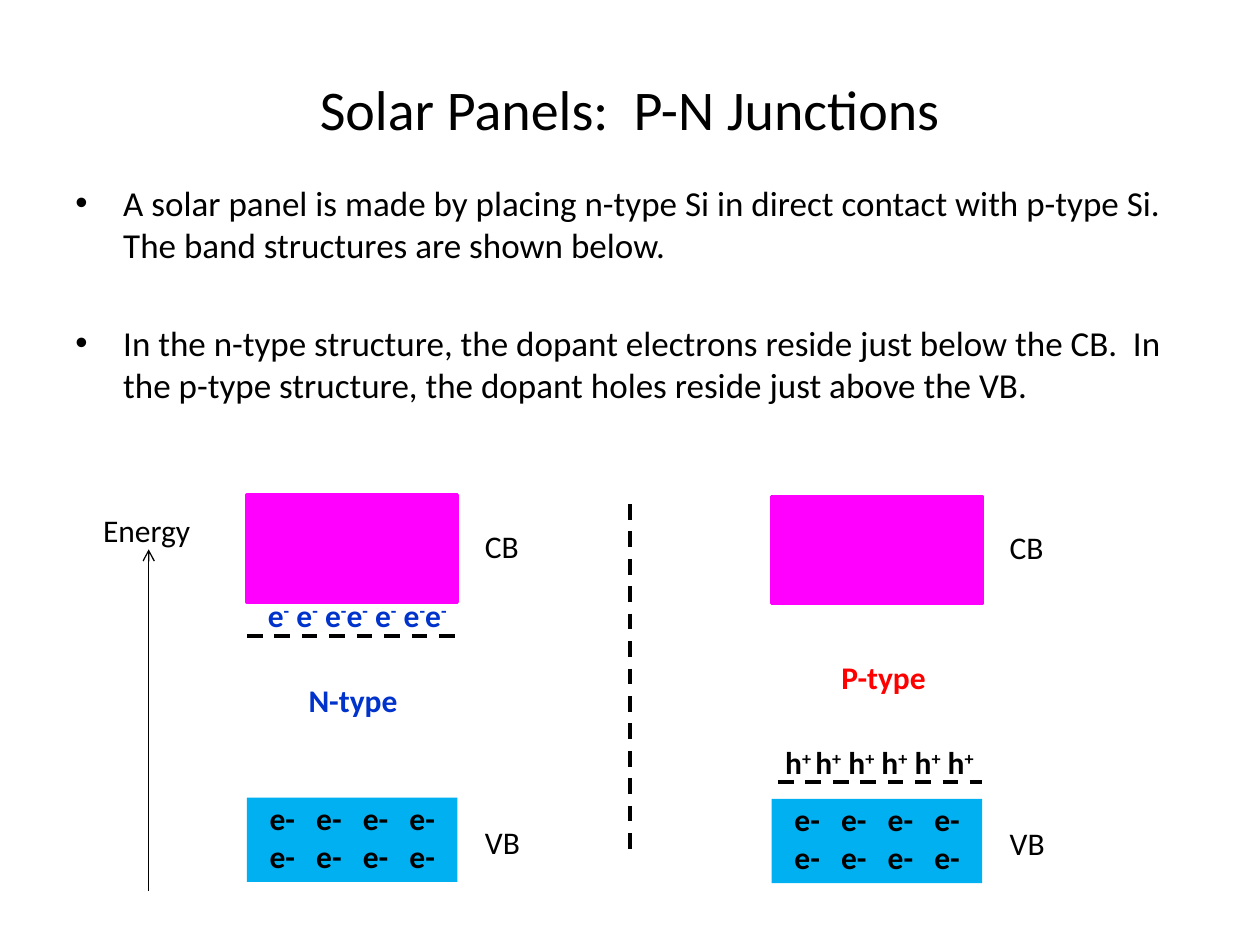
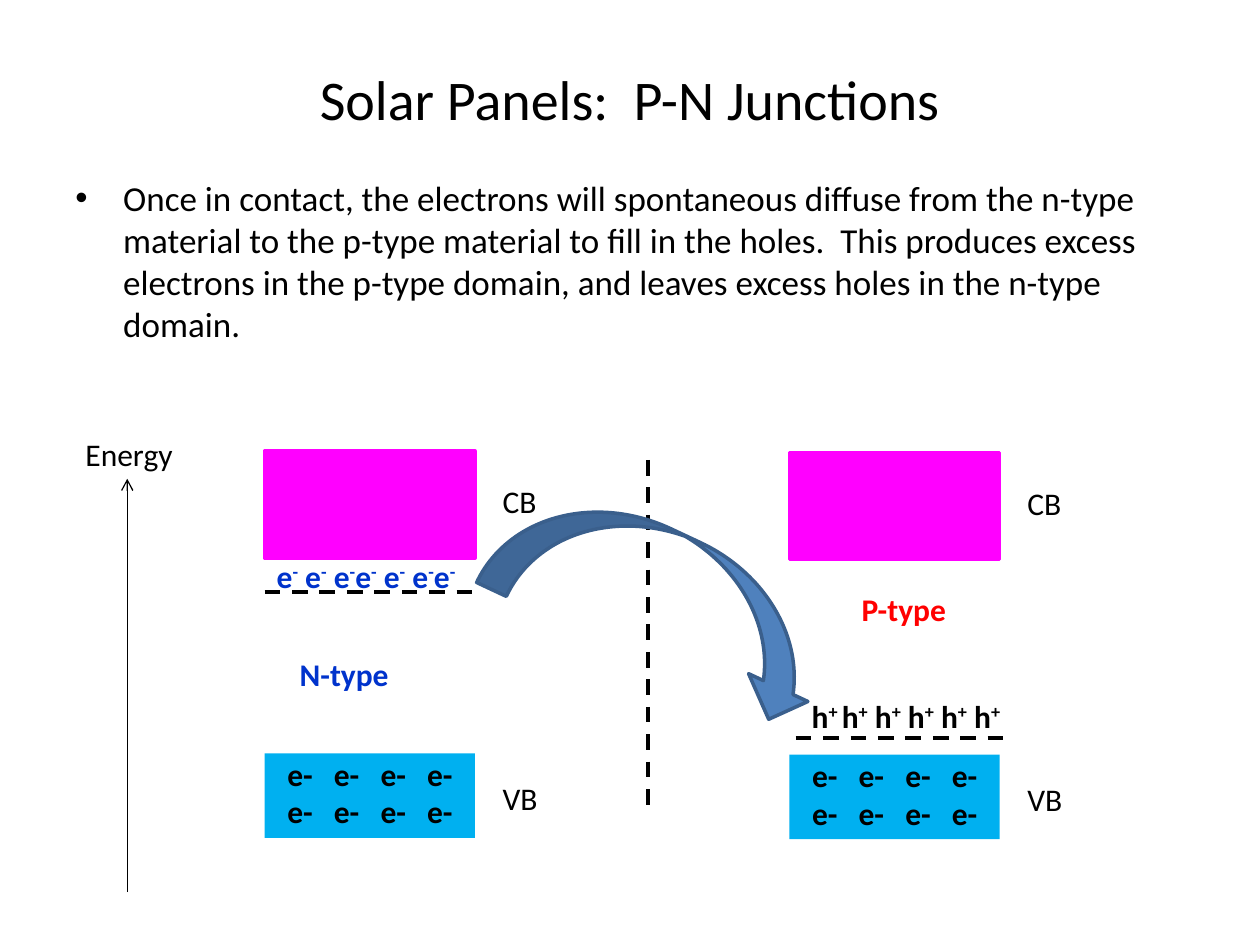
from lxml import etree
from pptx import Presentation
from pptx import util as u
from pptx.dml.color import RGBColor
from pptx.enum import dml, shapes, text
from pptx.oxml import ns

COLORS = {
    "ink": "000000",
    "conduction": "FF00FF",
    "valence": "00B0F0",
    "n_type": "0033CC",
    "p_type": "FF0000",
    "arrow": "4F81BD",
    "arrow_edge": "3A5F8C",
}
FONT = "Calibri"
TITLE = "Solar Panels:  P-N Junctions"
BAND_WIDTH = 1.67
P_OFFSET = 4.165
ELECTRON_PITCH = 0.37
ELECTRONS = "e|-| e|-| e|-|e|-| e|-| e|-|e|-"
HOLES = "h|+ |h|+| h|+| h|+| h|+| h|+"


def rgb(name):
    return RGBColor.from_string(COLORS[name])


def inches(*lengths):
    return [u.Inches(length) for length in lengths]


def format_span(span, size, color, bold=False):
    span.font.name = FONT
    span.font.size = u.Pt(size)
    span.font.bold = bold
    span.font.color.rgb = rgb(color)


def add_text(page, at, wording, size=18, color="ink", bold=False):
    box = page.shapes.add_textbox(*inches(*at))
    box.text_frame.word_wrap = True
    box.text_frame.text = wording
    for para in box.text_frame.paragraphs:
        for span in para.runs:
            format_span(span, size, color, bold)
    return box


def add_title(page, top):
    title = page.shapes.title
    title.left, title.top, title.width, title.height = inches(0.5, top, 9, 0.95)
    title.text_frame.text = TITLE
    title.text_frame.vertical_anchor = text.MSO_ANCHOR.MIDDLE
    para = title.text_frame.paragraphs[0]
    para.alignment = text.PP_ALIGN.CENTER
    format_span(para.runs[0], 32, "ink")


def add_bullets(page, top, height, points):
    box = add_text(page, (0.5, top, 9, height), "\n".join(points), size=20)
    for index, para in enumerate(box.text_frame.paragraphs):
        para.space_before = u.Pt(32 if index else 4)
        props = para._p.get_or_add_pPr()
        props.set("marL", str(u.Inches(0.38)))
        props.set("indent", str(-u.Inches(0.38)))
        etree.SubElement(props, ns.qn("a:buFont"), typeface="Arial")
        etree.SubElement(props, ns.qn("a:buChar"), char="•")


def add_preset(page, kind, at, fill, edge=None):
    shape = page.shapes.add_shape(kind, *inches(*at))
    shape.shadow.inherit = False
    shape.fill.solid()
    shape.fill.fore_color.rgb = rgb(fill)
    if edge:
        shape.line.color.rgb = rgb(edge)
        shape.line.width = u.Pt(2)
    else:
        shape.line.fill.background()
    return shape


def add_line(page, start, end, width=2.25, dashed=True):
    line = page.shapes.add_connector(
        shapes.MSO_CONNECTOR.STRAIGHT, *inches(*start, *end))
    line.line.color.rgb = rgb("ink")
    line.line.width = u.Pt(width)
    if dashed:
        line.line.dash_style = dml.MSO_LINE.DASH
    etree.SubElement(line._element.spPr, ns.qn("a:effectLst"))
    return line


def add_valence_electrons(page, left, top):
    row = "\t".join(["e-"] * 4)
    box = add_text(page, (left, top, 1.58, 0.71), f"{row}\n{row}", bold=True)
    box.text_frame.margin_left = u.Inches(0.13)
    box.text_frame.margin_right = 0
    for para in box.text_frame.paragraphs:
        stops = etree.SubElement(para._p.get_or_add_pPr(), ns.qn("a:tabLst"))
        for column in range(1, 4):
            position = str(u.Inches(column * ELECTRON_PITCH))
            etree.SubElement(stops, ns.qn("a:tab"), pos=position, algn="l")


def add_bands(page, left, top):
    rectangle = shapes.MSO_SHAPE.RECTANGLE
    add_preset(page, rectangle, (left, top + 2.4, BAND_WIDTH, 0.67), "valence")
    add_valence_electrons(page, left + 0.05, top + 2.36)
    add_preset(page, rectangle, (left, top, BAND_WIDTH, 0.85),
               "conduction", "conduction")
    for label, drop in (("VB", 2.55), ("CB", 0.2)):
        add_text(page, (left + 1.79, top + drop, 0.58, 0.4), label)


def add_level(page, left, top, length=BAND_WIDTH):
    add_line(page, (left, top), (left + length, top))


def add_carriers(page, left, top, width, pattern, color):
    box = add_text(page, (left, top, width, 0.4), "")
    para = box.text_frame.paragraphs[0]
    para.alignment = text.PP_ALIGN.CENTER
    for index, part in enumerate(pattern.split("|")):
        span = para.add_run()
        span.text = part
        format_span(span, 18, color, bold=True)
        if index % 2:
            span._r.get_or_add_rPr().set("baseline", "30000")


def add_energy_axis(page, x, bottom, top, label_at):
    axis = add_line(page, (x, bottom), (x, top), width=0.75, dashed=False)
    etree.SubElement(axis.line._get_or_add_ln(), ns.qn("a:tailEnd"), type="arrow")
    add_text(page, (*label_at, 0.96, 0.4), "Energy")


def add_junction(page, left, top, electrons_at, holes_at, n_at, p_at, p_level):
    add_bands(page, left, top)
    add_level(page, left, top + 1.12)
    add_line(page, (left + 3.04, top + 0.07), (left + 3.04, top + 2.82))
    add_bands(page, left + P_OFFSET, top + 0.01)
    add_level(page, left + P_OFFSET + 0.05, top + 2.28, p_level)
    add_text(page, (*n_at, 0.92, 0.4), "N-type", color="n_type", bold=True)
    add_text(page, (*p_at, 0.92, 0.4), "P-type", color="p_type", bold=True)
    add_carriers(page, *electrons_at, 2.19, ELECTRONS, "n_type")
    add_carriers(page, *holes_at, 2.54, HOLES, "ink")


def add_diffusion_arrow(page):
    arrow = add_preset(page, shapes.MSO_SHAPE.CURVED_DOWN_ARROW,
                       (3.87, 4.23, 2.82, 1.04), "arrow", "arrow_edge")
    arrow.rotation = 25.1


def add_page(deck, title_top):
    page = deck.slides.add_slide(deck.slide_layouts.get_by_name("Title Only"))
    add_title(page, title_top)
    return page


def build_structure_page(deck):
    page = add_page(deck, 0.38)
    add_bullets(page, 1.39, 4.95, [
        "A solar panel is made by placing n-type Si in direct contact with "
        "p-type Si.  The band structures are shown below.",
        "In the n-type structure, the dopant electrons reside just below the "
        "CB.  In the p-type structure, the dopant holes reside just above the VB.",
    ])
    add_junction(page, 1.96, 3.93, electrons_at=(1.74, 4.68),
                 holes_at=(5.71, 5.85), n_at=(2.35, 5.36), p_at=(6.58, 5.17),
                 p_level=1.62)
    add_energy_axis(page, 1.18, 7.07, 4.36, label_at=(0.72, 4.01))


def build_diffusion_page(deck):
    page = add_page(deck, 0.3)
    add_bullets(page, 1.35, 1.73, [
        "Once in contact, the electrons will spontaneous diffuse from the "
        "n-type material to the p-type material to fill in the holes.  This "
        "produces excess electrons in the p-type domain, and leaves excess "
        "holes in the n-type domain.",
    ])
    add_junction(page, 2.1, 3.58, electrons_at=(1.81, 4.37),
                 holes_at=(5.92, 5.48), n_at=(2.28, 5.15), p_at=(6.74, 4.63),
                 p_level=BAND_WIDTH)
    add_diffusion_arrow(page)
    add_energy_axis(page, 1.01, 7.08, 3.8, label_at=(0.58, 3.4))


def main():
    deck = Presentation()
    deck.slide_width, deck.slide_height = inches(10, 7.5)
    build_structure_page(deck)
    build_diffusion_page(deck)
    deck.save("out.pptx")


if __name__ == "__main__":
    main()
